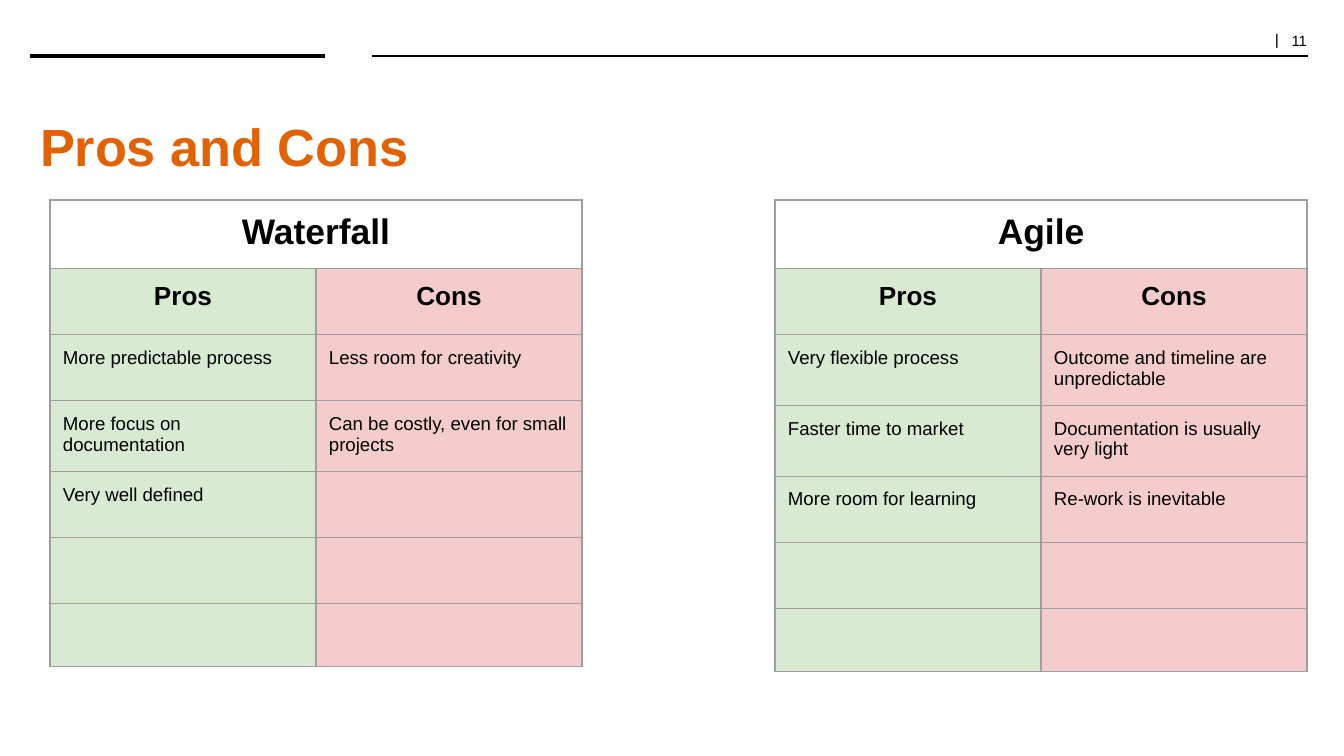
from pptx import Presentation
from pptx.dml.color import RGBColor
from pptx.enum.shapes import MSO_CONNECTOR
from pptx.enum.text import MSO_ANCHOR, PP_ALIGN
from pptx.oxml.ns import qn
from pptx.util import Pt
from lxml import etree

STRAIGHT = MSO_CONNECTOR.STRAIGHT
MIDDLE = MSO_ANCHOR.MIDDLE
LEFT, CENTER, RIGHT = PP_ALIGN.LEFT, PP_ALIGN.CENTER, PP_ALIGN.RIGHT

PX = 914400 * 10 / 1344  # the slide is 1344 px wide


class Theme:
    font, number_font = "Arial", "TeX Gyre Schola"
    ink, accent = RGBColor(0, 0, 0), RGBColor(0xE4, 0x61, 0x02)
    pros, cons = RGBColor(0xD9, 0xEA, 0xD3), RGBColor(0xF4, 0xCC, 0xCC)
    border, border_width = "9E9E9E", Pt(0.75)
    title, name, heading, body = Pt(28), Pt(19), Pt(14), Pt(10)
    bar, number = Pt(9), Pt(8)


def px(n):
    return round(n * PX)


def set_font(font, size, color=Theme.ink, bold=False, name=Theme.font):
    font.name, font.size, font.bold = name, size, bold
    font.color.rgb = color


prs = Presentation()
prs.slide_width, prs.slide_height = px(1344), px(756)
s = prs.slides.add_slide(prs.slide_layouts[6])

# Header rules
for x1, x2, weight in [(30, 325, 2), (372, 1308, 1)]:
    line = s.shapes.add_connector(STRAIGHT, px(x1), px(56), px(x2), px(56))
    line.line.color.rgb = Theme.ink
    line.line.width = Pt(weight)
    etree.SubElement(line._element.spPr, qn("a:effectLst"))

# Slide number and title
paragraphs = []
for box in [(1180, 28, 137, 27), (30, 107, 1278, 77)]:
    tf = s.shapes.add_textbox(*map(px, box)).text_frame
    tf.word_wrap = True
    tf.vertical_anchor = MIDDLE
    tf.margin_left = tf.margin_right = px(10)
    tf.margin_top = tf.margin_bottom = px(5)
    paragraphs.append(tf.paragraphs[0])
number, title = paragraphs

number.alignment = RIGHT
number.line_spacing = 0.8
for text, size, name in [("|  ", Theme.bar, Theme.number_font),
                         ("11", Theme.number, Theme.font)]:
    r = number.add_run()
    r.text = text
    set_font(r.font, size, name=name)

title.text = "Pros and Cons"
set_font(title.font, Theme.title, Theme.accent, bold=True)

# One table per method: name, headings, then pairs of pros and cons
EMPTY = ("", "")
methods = [
    (50, [("Waterfall", ""), ("Pros", "Cons"),
          ("More predictable process", "Less room for creativity"),
          ("More focus on documentation",
           "Can be costly, even for small projects"),
          ("Very well defined", ""), EMPTY, EMPTY]),
    (775, [("Agile", ""), ("Pros", "Cons"),
           ("Very flexible process", "Outcome and timeline are unpredictable"),
           ("Faster time to market", "Documentation is usually very light"),
           ("More room for learning", "Re-work is inevitable"), EMPTY, EMPTY]),
]
row_heights = [66] * 6 + [63]
row_sizes = [Theme.name, Theme.heading]

for left, rows in methods:
    table = s.shapes.add_table(len(rows), 2, px(left), px(200), px(532),
                               px(sum(row_heights))).table
    table.first_row = table.horz_banding = False
    for col in table.columns:
        col.width = px(266)
    for i, texts in enumerate(rows):
        table.rows[i].height = px(row_heights[i])
        is_head = i < len(row_sizes)
        for j, text in enumerate(texts):
            cell = table.cell(i, j)
            tcPr = cell._tc.get_or_add_tcPr()
            for side in ("a:lnL", "a:lnR", "a:lnT", "a:lnB"):
                ln = etree.SubElement(tcPr, qn(side), w=str(Theme.border_width))
                fill = etree.SubElement(ln, qn("a:solidFill"))
                etree.SubElement(fill, qn("a:srgbClr"), val=Theme.border)
            if i == 0:
                cell.fill.background()
            else:
                cell.fill.solid()
                cell.fill.fore_color.rgb = (Theme.pros, Theme.cons)[j]
            if text:
                cell.margin_left = cell.margin_right = px(13)
                cell.margin_top = cell.margin_bottom = px(13)
                p = cell.text_frame.paragraphs[0]
                p.text = text
                p.alignment = CENTER if is_head else LEFT
                set_font(p.font, row_sizes[i] if is_head else Theme.body,
                         bold=is_head)
    table.cell(0, 0).merge(table.cell(0, 1))

prs.save("out.pptx")
